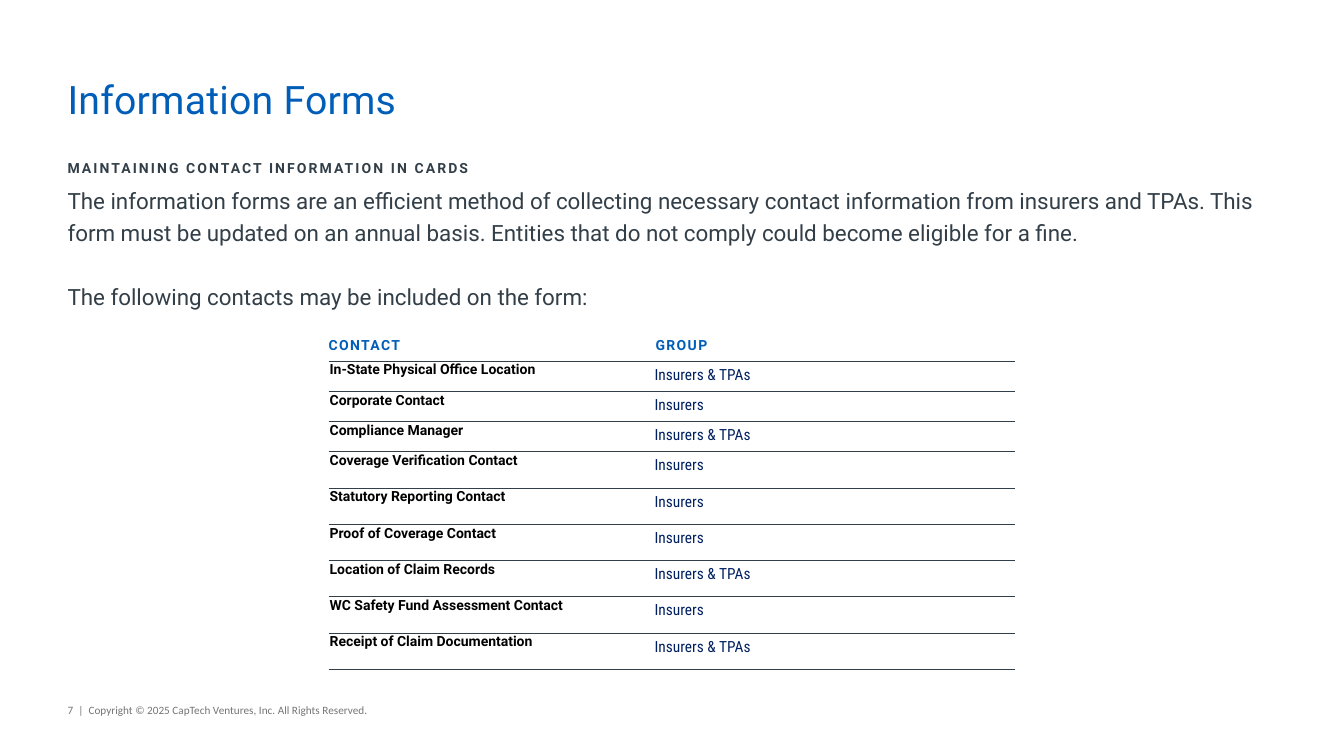
from lxml import etree
from pptx import Presentation
from pptx.dml.color import RGBColor
from pptx.enum.text import MSO_ANCHOR
from pptx.oxml.ns import qn
from pptx.util import Inches, Pt

TOP, MIDDLE = MSO_ANCHOR.TOP, MSO_ANCHOR.MIDDLE
WIDE, HIGH = 13.33, 7.5
LEFT = 0.67
FULL = WIDE - 2 * LEFT
BLUE, SLATE, NAVY, GRAY = "005EB8", "333F48", "002060", "757575"
BLACK, WHITE = "000000", "FFFFFF"
BOTH, ONE = "Insurers & TPAs", "Insurers"
HEAD = ("CONTACT", "GROUP")
ROWS = [
    ("In-State Physical Office Location", BOTH),
    ("Corporate Contact", ONE),
    ("Compliance Manager", BOTH),
    ("Coverage Verification Contact", ONE),
    ("Statutory Reporting Contact", ONE),
    ("Proof of Coverage Contact", ONE),
    ("Location of Claim Records", BOTH),
    ("WC Safety Fund Assessment Contact", ONE),
    ("Receipt of Claim Documentation", BOTH),
]
INTRO = [
    "The information forms are an efficient method of collecting necessary "
    "contact information from insurers and TPAs. This form must be updated on "
    "an annual basis. Entities that do not comply could become eligible for a fine.",
    "The following contacts may be included on the form:",
]


def color(code):
    """Turn a hex string into a colour."""
    return RGBColor.from_string(code)


def write(frame, *texts, size=10, font="Roboto", ink=SLATE, bold=False,
          track=0, line=None, gap=0):
    """Fill a text frame with one formatted paragraph per text."""
    for i, text in enumerate(texts):
        para = frame.add_paragraph() if i else frame.paragraphs[0]
        if line:
            para.line_spacing = line
        if i:
            para.space_before = Pt(gap)
        run = para.add_run()
        run.text = text
        run.font.size, run.font.name, run.font.bold = Pt(size), font, bold
        run.font.color.rgb = color(ink)
        run._r.get_or_add_rPr().set("spc", str(int(track * 100)))


def inset(part, sides):
    """Set left, top, right and bottom margins in inches."""
    (part.margin_left, part.margin_top,
     part.margin_right, part.margin_bottom) = map(Inches, sides)


def label(slide, box, *texts, sides=(0, 0, 0, 0), **style):
    """Place a wrapped text box."""
    frame = slide.shapes.add_textbox(*map(Inches, box)).text_frame
    frame.word_wrap = True
    frame.vertical_anchor = TOP
    inset(frame, sides)
    write(frame, *texts, **style)


def rule(cell, side, ink):
    """Draw a thin cell edge, or clear it when no ink is given."""
    edge = etree.SubElement(cell._tc.get_or_add_tcPr(), qn("a:" + side))
    if ink:
        edge.set("w", str(Pt(0.5)))
        fill = etree.SubElement(edge, qn("a:solidFill"))
        etree.SubElement(fill, qn("a:srgbClr"), val=ink)
    else:
        etree.SubElement(edge, qn("a:noFill"))


def fill_cell(cell, text, row, col):
    """Format one cell by its row and column."""
    for side in ("lnL", "lnR"):
        rule(cell, side, None)
    rule(cell, "lnT", SLATE if row else None)
    rule(cell, "lnB", SLATE)
    cell.fill.solid()
    cell.fill.fore_color.rgb = color(WHITE)
    cell.vertical_anchor = TOP if row else MIDDLE
    if row == 0:
        inset(cell, (0.11, 0.05, 0, 0.05) if col else (0, 0.05, 0.11, 0.05))
        write(cell.text_frame, text, ink=BLUE, bold=True, track=1)
    elif col:
        inset(cell, (0.1, 0.05, 0.1, 0.05))
        write(cell.text_frame, text, size=11, font="Roboto Condensed", ink=NAVY)
    else:
        inset(cell, (0.01, 0.01, 0.01, 0))
        write(cell.text_frame, text, ink=BLACK, bold=True)


def contacts(slide, box):
    """Build the table of contacts and their groups."""
    data = [HEAD, *ROWS]
    table = slide.shapes.add_table(len(data), 2, *map(Inches, box)).table
    table.first_row = table.horz_banding = False
    for col, share in zip(table.columns, (0.46, 0.54)):
        col.width = Inches(box[2] * share)
    for r, pair in enumerate(data):
        table.rows[r].height = Inches(0.3 if r < 4 else 0.36)
        for c, text in enumerate(pair):
            fill_cell(table.cell(r, c), text, r, c)


def header(slide, box):
    """Place the title and the line under it."""
    x, y, w, h = box
    label(slide, (x, y, w, 0.47), "Information Forms",
          size=28, ink=BLUE, track=0.2)
    label(slide, (x, y + 0.72, w / 2, h - 0.72),
          "MAINTAINING CONTACT INFORMATION IN CARDS",
          bold=True, track=1.5, line=Pt(20))


def main():
    """Build and save the slide."""
    deck = Presentation()
    deck.slide_width, deck.slide_height = Inches(WIDE), Inches(HIGH)
    slide = deck.slides.add_slide(deck.slide_layouts[6])
    label(slide, (LEFT, 6.93, 3.38, 0.24),
          "7  |  Copyright © 2025 CapTech Ventures, Inc. All Rights Reserved.",
          sides=(0, 0.05, 0.1, 0.05), size=8, font="Calibri", ink=GRAY)
    label(slide, (LEFT, 1.8, FULL, 2.63), *INTRO, size=16, line=1.2, gap=23)
    header(slide, (LEFT, 0.75, FULL, 1.03))
    contacts(slide, (3.26, 3.28, 6.81, 3.34))
    deck.save("out.pptx")


if __name__ == "__main__":
    main()
